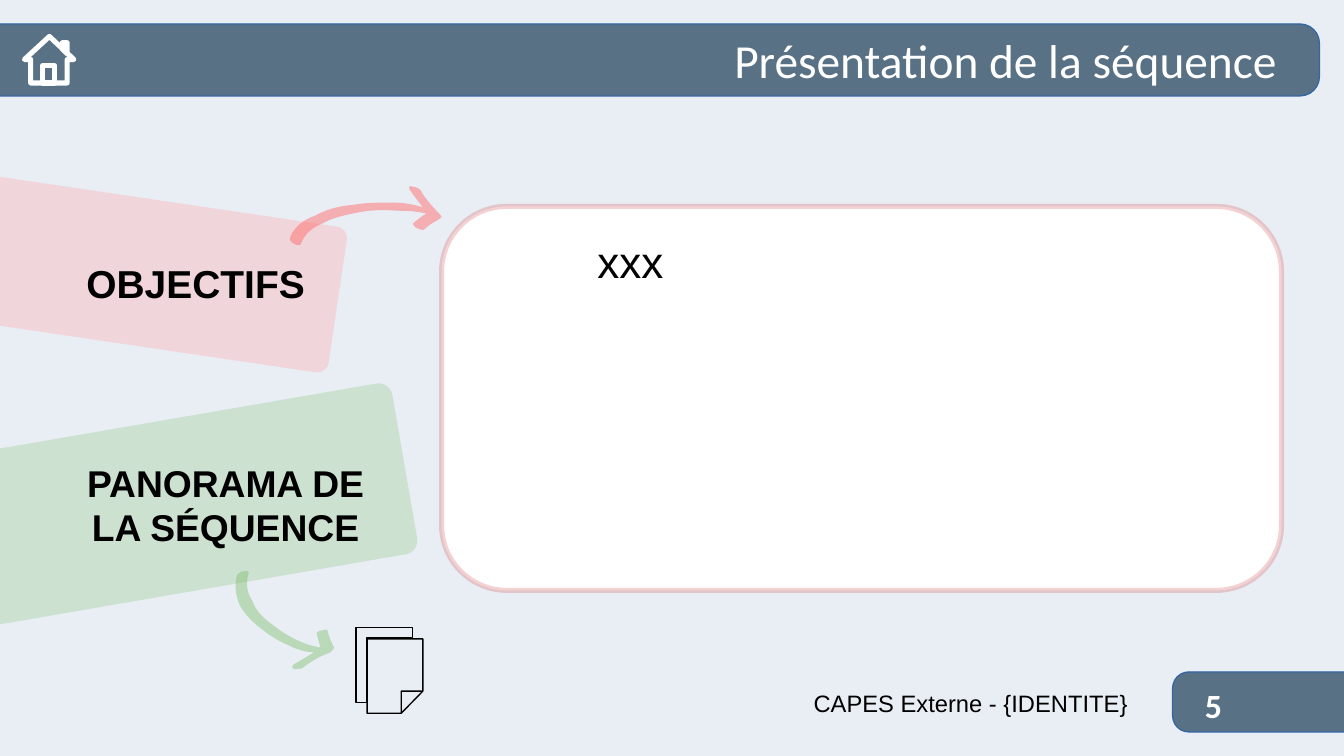
from dataclasses import dataclass
from math import comb

from lxml import etree
from pptx import Presentation
from pptx import util as u
from pptx.dml.color import RGBColor
from pptx.enum import shapes, text
from pptx.oxml.ns import qn

LEFT, MID, RIGHT = text.PP_ALIGN.LEFT, text.PP_ALIGN.CENTER, text.PP_ALIGN.RIGHT


@dataclass(frozen=True)
class Theme:
    """Colours and type sizes of the slide."""
    back: str = "E9EEF5"
    slate: str = "355269"
    edge: str = "3465A4"
    rose: str = "FFA6A6"
    coral: str = "FF6D6D"
    green: str = "77BC65"
    red: str = "C9211E"
    white: str = "FFFFFF"
    black: str = "000000"
    sans: str = "Arial"
    head: str = "Calibri"
    title: float = 28
    body: float = 26
    goal: float = 23
    plan: float = 22
    page: float = 20
    foot: float = 14


class Pen:
    """Draws styled elements on the current slide."""

    def __init__(self, slide, theme):
        """Keep the slide and theme, and paint the background."""
        self.slide, self.theme = slide, theme
        self.paint(slide.background.fill, theme.back)

    def paint(self, fill, color, alpha=100):
        """Give a fill a solid colour with an opacity in percent."""
        fill.solid()
        fill.fore_color.rgb = RGBColor.from_string(color)
        if alpha < 100:
            node = fill._xPr.find(qn("a:solidFill"))[0]
            etree.SubElement(node, qn("a:alpha"), val=str(alpha * 1000))

    def style(self, item, fill=None, alpha=100, line=None, width=0, fade=100):
        """Set fill, outline and shadow of a shape."""
        item.shadow.inherit = False
        if fill:
            self.paint(item.fill, fill, alpha)
        else:
            item.fill.background()
        if line:
            self.paint(item.line.fill, line, fade)
            item.line.width = u.Pt(width)
        else:
            item.line.fill.background()
        return item

    def card(self, box, round_by, turn=0, **look):
        """Add a rounded rectangle."""
        item = self.slide.shapes.add_shape(
            shapes.MSO_SHAPE.ROUNDED_RECTANGLE, *map(u.Cm, box))
        item.adjustments[0] = round_by
        item.rotation = turn
        return self.style(item, **look)

    def trace(self, dots, close=True, **look):
        """Add an outline through points given in centimetres."""
        grid = [(round(x * 1000), round(y * 1000)) for x, y in dots]
        form = self.slide.shapes.build_freeform(*grid[0], scale=u.Cm(0.001))
        form.add_line_segments(grid[1:], close=close)
        return self.style(form.convert_to_shape(), **look)

    def curve(self, start, parts, **look):
        """Add a closed outline made of cubic curves."""
        dots = [start]
        for part in parts:
            knots = [dots[-1], *zip(part[::2], part[1::2])]
            for step in range(1, 9):
                t = step / 8
                mix = [comb(3, i) * t ** i * (1 - t) ** (3 - i) for i in range(4)]
                dots.append(tuple(sum(m * k[axis] for m, k in zip(mix, knots))
                                  for axis in (0, 1)))
        return self.trace(dots, **look)

    def letter(self, item, words, size, color, font, bold=False, align=LEFT,
               pad=(0, 0, 0, 0), anchor=text.MSO_ANCHOR.TOP):
        """Put formatted words in a shape."""
        frame = item.text_frame
        frame.text = words
        frame.word_wrap = True
        frame.vertical_anchor = anchor
        (frame.margin_left, frame.margin_top,
         frame.margin_right, frame.margin_bottom) = map(u.Cm, pad)
        for para in frame.paragraphs:
            para.alignment = align
            for run in para.runs:
                run.font.name, run.font.size, run.font.bold = font, u.Pt(size), bold
                run.font.color.rgb = RGBColor.from_string(color)

    def label(self, box, words, size, color, font, **look):
        """Add a text box."""
        item = self.slide.shapes.add_textbox(*map(u.Cm, box))
        self.letter(item, words, size, color, font, **look)


ROSE_ARC = [
    (9.02, 4.32, 8.86, 4.14, 8.76, 3.96), (8.71, 3.91, 8.64, 3.89, 8.59, 3.89),
    (8.56, 3.86, 8.51, 3.89, 8.53, 3.94), (8.61, 4.06, 8.71, 4.19, 8.81, 4.32),
    (8.6, 4.25, 8.38, 4.22, 8.18, 4.22), (7.9, 4.22, 7.62, 4.22, 7.34, 4.27),
    (7.06, 4.29, 6.78, 4.37, 6.55, 4.5), (6.35, 4.57, 6.15, 4.7, 6.05, 4.93),
    (5.98, 5.05, 6.25, 5.16, 6.27, 5.08), (6.35, 4.85, 6.55, 4.72, 6.73, 4.65),
    (6.96, 4.52, 7.24, 4.47, 7.49, 4.42), (7.75, 4.37, 8.03, 4.37, 8.28, 4.39),
    (8.48, 4.39, 8.68, 4.4, 8.89, 4.45), (8.79, 4.5, 8.71, 4.57, 8.61, 4.65),
    (8.59, 4.67, 8.66, 4.75, 8.69, 4.75), (8.74, 4.78, 8.81, 4.8, 8.84, 4.78),
    (8.94, 4.67, 9.07, 4.62, 9.17, 4.55), (9.22, 4.52, 9.19, 4.5, 9.17, 4.47)]
GREEN_ARC = [
    (6.68, 13.67, 6.48, 13.77, 6.3, 13.92), (6.22, 13.94, 6.15, 13.94, 6.12, 13.94),
    (6.1, 13.92, 6.07, 13.89, 6.12, 13.84), (6.25, 13.77, 6.4, 13.67, 6.55, 13.59),
    (6.4, 13.59, 6.2, 13.54, 6.05, 13.46), (5.82, 13.36, 5.64, 13.26, 5.46, 13.11),
    (5.28, 12.98, 5.13, 12.83, 5, 12.62), (4.93, 12.45, 4.88, 12.27, 4.93, 12.01),
    (4.95, 11.89, 5.21, 11.86, 5.18, 11.94), (5.11, 12.19, 5.16, 12.37, 5.26, 12.52),
    (5.33, 12.73, 5.49, 12.88, 5.66, 13), (5.82, 13.13, 6.02, 13.26, 6.2, 13.34),
    (6.38, 13.42, 6.5, 13.46, 6.68, 13.49), (6.65, 13.41, 6.63, 13.31, 6.6, 13.21),
    (6.58, 13.16, 6.71, 13.13, 6.73, 13.13), (6.78, 13.11, 6.83, 13.11, 6.83, 13.16),
    (6.86, 13.28, 6.91, 13.39, 6.96, 13.49), (6.96, 13.51, 6.93, 13.54, 6.88, 13.59)]
HOUSE = [
    [(0.64, 1.73), (0.64, 1.24), (0.51, 1.24), (1.03, 0.76), (1.54, 1.24),
     (1.4, 1.24), (1.4, 1.73)],
    [(1.14, 1.73), (1.14, 1.37), (0.89, 1.37), (0.89, 1.73)],
    [(1.3, 1.02), (1.3, 0.89), (1.4, 0.89), (1.4, 1.12)]]
FRONT = [(8.36, 14.86), (7.65, 14.86), (7.65, 13.31), (8.81, 13.31),
         (8.81, 14.4), (8.36, 14.86), (8.36, 14.4), (8.81, 14.4)]
REAR = [(8.59, 13.28), (8.59, 13.08), (7.42, 13.08), (7.42, 14.63),
        (7.65, 14.63), (7.65, 13.28)]


def main():
    """Build and save the slide."""
    deck = Presentation()
    deck.slide_width, deck.slide_height = u.Cm(28), u.Cm(15.75)
    t = Theme()
    pen = Pen(deck.slides.add_slide(deck.slide_layouts[6]), t)

    for box in ((-0.51, 0.5, 28, 1.5), (24.43, 14, 12.55, 1.25)):
        pen.card(box, 0.27, fill=t.slate, alpha=80, line=t.edge)
    pen.label((7.49, 0.5, 19.1, 1.5), "Présentation de la séquence", t.title,
              t.white, t.head, align=RIGHT, anchor=text.MSO_ANCHOR.MIDDLE)

    pen.card((-1, 4.15, 8.08, 3.07), 0.08, 8.4, fill=t.rose, alpha=33)
    pen.label((1.8, 5.41, 6.1, 1.32), "OBJECTIFS", t.goal, t.black, t.sans, bold=True)
    pen.card((-2.01, 8.81, 10.52, 3.61), 0.08, -9.8, fill=t.green, alpha=25)
    pen.label((1.4, 9.58, 6.6, 1.8), "PANORAMA DE LA SÉQUENCE", t.plan, t.black,
              t.sans, bold=True, align=MID)

    frame = pen.card((9.2, 4.3, 17.5, 8), 0.17, fill=t.white,
                     line=t.red, width=3, fade=20)
    pen.letter(frame, "xxx", t.body, t.black, t.sans, pad=(2.85, 0.18, 0.3, 0.18))
    pen.curve((9.17, 4.47), ROSE_ARC, fill=t.coral, alpha=50)
    pen.curve((6.88, 13.59), GREEN_ARC, fill=t.green, alpha=41)

    for part in HOUSE:
        pen.trace(part, line=t.white, width=3)
    pen.trace(FRONT, close=False, line=t.black, width=0.8)
    pen.trace(REAR, line=t.black, width=0.8)

    pen.label((6.7, 14.35, 16.8, 1.1), "CAPES Externe - {IDENTITE}", t.foot,
              t.black, t.sans, align=RIGHT)
    pen.label((24.43, 14.27, 1.7, 1.1), "5", t.page, t.white, t.head,
              bold=True, align=MID)
    deck.save("out.pptx")


if __name__ == "__main__":
    main()
